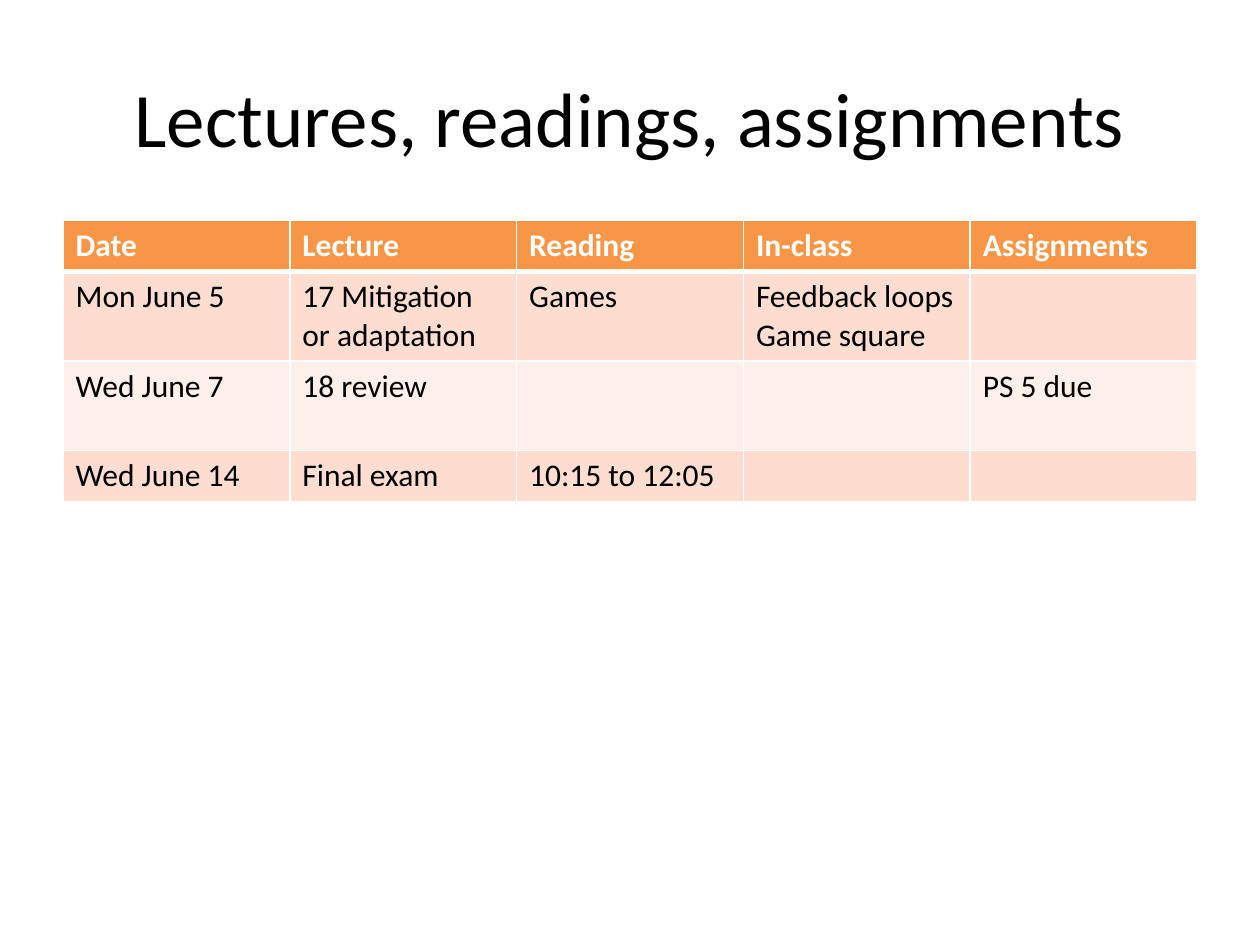
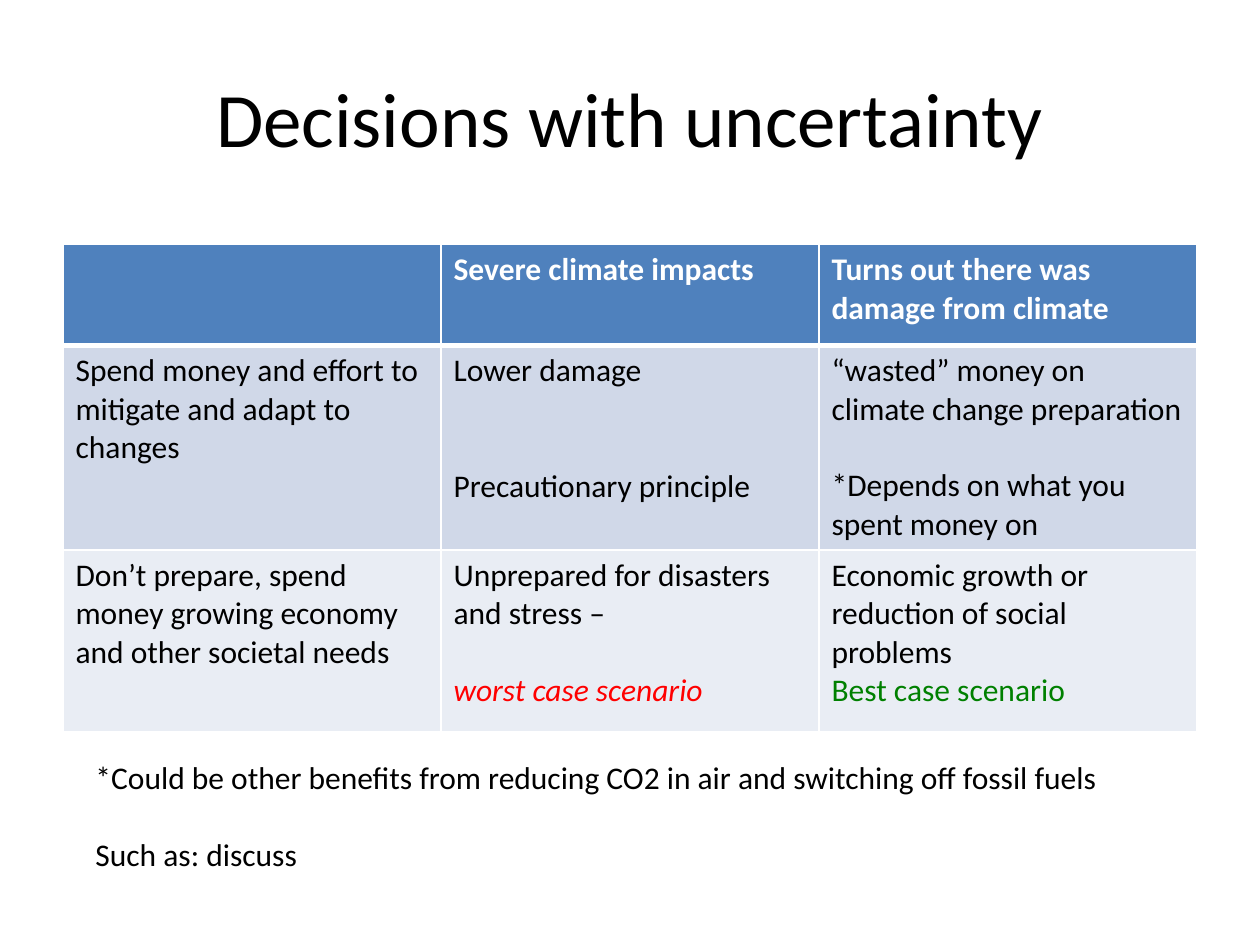
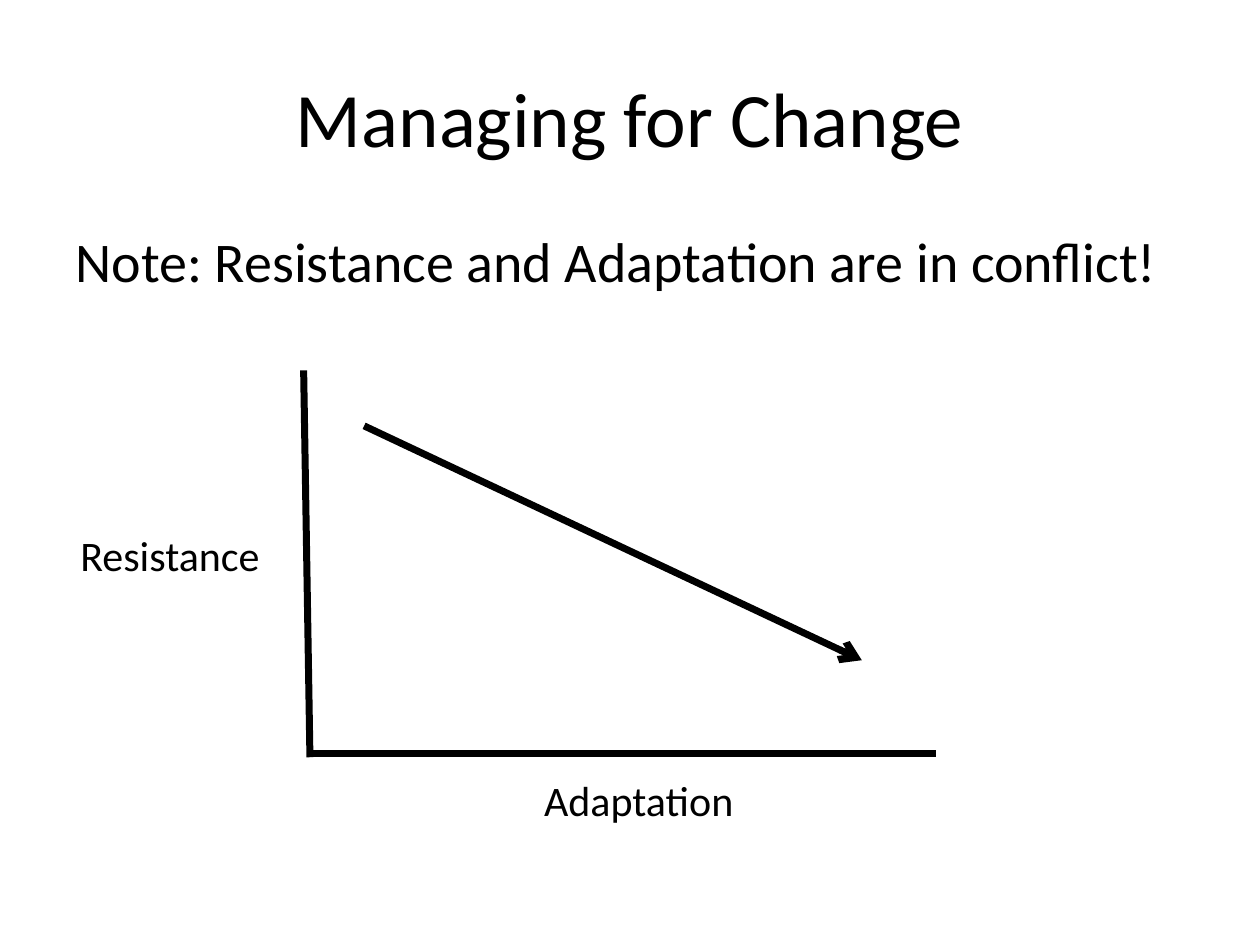
"""Build three slides on lectures, decisions and change."""
from dataclasses import dataclass
from typing import NamedTuple, Union

from lxml.etree import SubElement as Sub
from pptx import Presentation
from pptx.dml.color import RGBColor as Rgb
from pptx.enum.shapes import MSO_CONNECTOR as Link
from pptx.enum.text import MSO_ANCHOR as Anchor, MSO_AUTO_SIZE as Fit, PP_ALIGN as Align
from pptx.oxml.ns import qn
from pptx.util import Inches, Pt


@dataclass(frozen=True)
class Theme:
    font: str = "Calibri"
    ink: str = "000000"
    paper: str = "FFFFFF"
    red: str = "FF0000"
    green: str = "008000"
    title: int = 44
    body: int = 32
    label: int = 24
    text: int = 18
    blank: int = 22
    stroke: int = 4
    rule: int = 1
    bar: int = 3


THEME = Theme()
WIDE, HIGH = Inches(10), Inches(7.5)
COLS, ROWS = 100, 75


class Box(NamedTuple):
    left: float
    top: float
    wide: float
    high: float


class Line(NamedTuple):
    text: str
    ink: str = THEME.ink
    slant: bool = False
    gap: int = 0


class Stroke(NamedTuple):
    start: tuple[float, float]
    end: tuple[float, float]
    arrow: bool = False


class Label(NamedTuple):
    box: Box
    lines: list[Line]
    size: int
    wrap: bool = False


Cell = Union[str, list[Line]]


class Table(NamedTuple):
    top: float
    rows: list[float]
    head: str
    bands: tuple[str, str]
    cells: list[list[Cell]]


TITLE = Box(5, 3, 90, 12.5)
BODY = Box(5, 17.5, 90, 49.5)

PLAN = Table(17.5, [4, 7.1, 7.1, 4], "F79646", ("FCDDCF", "FDEFE9"), [
    ["Date", "Lecture", "Reading", "In-class", "Assignments"],
    ["Mon June 5", "17 Mitigation or adaptation", "Games",
     [Line("Feedback loops"), Line("Game square")], ""],
    ["Wed June 7", "18 review", "", "", "PS 5 due"],
    ["Wed June 14", "Final exam", "10:15 to 12:05", "", ""],
])

CHOICE = Table(19.4, [8, 16.2, 14.4], "4F81BD", ("D0D8E8", "E9EDF4"), [
    ["", "Severe climate impacts", "Turns out there was damage from climate"],
    ["Spend money and effort to mitigate and adapt to changes",
     [Line("Lower damage"), Line("Precautionary principle", gap=2)],
     [Line("“wasted” money on climate change preparation"),
      Line("*Depends on what you spent money on", gap=1)]],
    ["Don’t prepare, spend money growing economy and other societal needs",
     [Line("Unprepared for disasters and stress –"),
      Line("worst case scenario", THEME.red, True, 1)],
     [Line("Economic growth or reduction of social problems"),
      Line("Best case scenario", THEME.green)]],
])

NOTE = Label(Box(6.6, 59.7, 84.7, 10.1), [
    Line("*Could be other benefits from reducing CO2 in air and switching off fossil fuels"),
    Line("Such as: discuss", gap=1),
], THEME.text, True)

AXES = [
    Label(Box(42.2, 61, 17, 5), [Line("Adaptation")], THEME.label),
    Label(Box(5.4, 41.5, 16.3, 5), [Line("Resistance")], THEME.label),
]

TREND = [
    Stroke((24.6, 59.8), (74.3, 59.8)),
    Stroke((24.6, 60.1), (24.1, 29.4)),
    Stroke((28.9, 33.8), (68.4, 52.4), True),
]


def col(num: float) -> int:
    """Turn grid columns into a length."""
    return round(num * WIDE / COLS)


def row(num: float) -> int:
    """Turn grid rows into a length."""
    return round(num * HIGH / ROWS)


def spot(box: Box) -> tuple[int, int, int, int]:
    """Turn a grid box into slide lengths."""
    return col(box.left), row(box.top), col(box.wide), row(box.high)


def write(frame, lines: list[Line], size: int, bold: bool = False) -> None:
    """Fill a text frame with one paragraph a line."""
    for num, line in enumerate(lines):
        para = frame.add_paragraph() if num else frame.paragraphs[0]
        if line.gap:
            para.space_before = Pt(line.gap * THEME.blank)
        run = para.add_run()
        run.text = line.text
        font = run.font
        font.name, font.size = THEME.font, Pt(size)
        font.bold, font.italic = bold, line.slant
        font.color.rgb = Rgb.from_string(line.ink)


def place(shape, box: Box) -> None:
    """Move a placeholder to a grid box."""
    shape.left, shape.top, shape.width, shape.height = spot(box)


def start(deck, kind: int, text: str):
    """Add a slide with a centred title."""
    slide = deck.slides.add_slide(deck.slide_layouts[kind])
    title = slide.shapes.title
    place(title, TITLE)
    frame = title.text_frame
    frame.vertical_anchor = Anchor.MIDDLE
    write(frame, [Line(text)], THEME.title)
    frame.paragraphs[0].alignment = Align.CENTER
    return slide


def edge(cell, tops: int, base: int) -> None:
    """Draw the four borders of a cell."""
    props = cell._tc.get_or_add_tcPr()
    sides = {"L": THEME.rule, "R": THEME.rule, "T": tops, "B": base}
    for num, (side, size) in enumerate(sides.items()):
        line = Sub(props, qn(f"a:ln{side}"), w=str(Pt(size)))
        Sub(Sub(line, qn("a:solidFill")), qn("a:srgbClr"), val=THEME.paper)
        props.insert(num, line)


def grid(slide, data: Table) -> None:
    """Add a table with a heading row and banded rows."""
    wide = len(data.cells[0])
    box = Box(TITLE.left, data.top, TITLE.wide, sum(data.rows))
    table = slide.shapes.add_table(len(data.rows), wide, *spot(box)).table
    for item in table.columns:
        item.width = col(TITLE.wide / wide)
    for pos, (high, cells) in enumerate(zip(data.rows, data.cells)):
        table.rows[pos].height = row(high)
        head = pos == 0
        fill = data.head if head else data.bands[(pos - 1) % 2]
        for num, text in enumerate(cells):
            cell = table.cell(pos, num)
            cell.fill.solid()
            cell.fill.fore_color.rgb = Rgb.from_string(fill)
            edge(cell, THEME.bar if pos == 1 else THEME.rule,
                 THEME.bar if head else THEME.rule)
            if isinstance(text, str):
                ink = THEME.paper if head else THEME.ink
                text = [Line(text, ink)] if text else []
            write(cell.text_frame, text, THEME.text, head)


def tag(slide, data: Label) -> None:
    """Add a text box that fits its text."""
    frame = slide.shapes.add_textbox(*spot(data.box)).text_frame
    frame.word_wrap = data.wrap
    frame.auto_size = Fit.SHAPE_TO_FIT_TEXT
    write(frame, data.lines, data.size)


def draw(slide, data: Stroke) -> None:
    """Add a straight line, with an arrowhead if asked."""
    (left, top), (right, base) = data.start, data.end
    line = slide.shapes.add_connector(
        Link.STRAIGHT, col(left), row(top), col(right), row(base))
    line.line.width = Pt(THEME.stroke)
    line.line.color.rgb = Rgb.from_string(THEME.ink)
    props = line._element.spPr
    if data.arrow:
        Sub(props.find(qn("a:ln")), qn("a:tailEnd"), type="arrow")
    Sub(props, qn("a:effectLst"))


def state(slide, text: str) -> None:
    """Fill the body with one plain line."""
    body = slide.placeholders[1]
    place(body, BODY)
    write(body.text_frame, [Line(text)], THEME.body)
    props = body.text_frame.paragraphs[0]._p.get_or_add_pPr()
    props.set("marL", "0")
    props.set("indent", "0")
    Sub(props, qn("a:buNone"))


def main() -> None:
    """Build and save the deck."""
    deck = Presentation()
    deck.slide_width, deck.slide_height = WIDE, HIGH

    grid(start(deck, 5, "Lectures, readings, assignments"), PLAN)

    slide = start(deck, 5, "Decisions with uncertainty")
    grid(slide, CHOICE)
    tag(slide, NOTE)

    slide = start(deck, 1, "Managing for Change")
    state(slide, "Note: Resistance and Adaptation are in conflict!")
    for label in AXES:
        tag(slide, label)
    for stroke in TREND:
        draw(slide, stroke)

    deck.save("out.pptx")


if __name__ == "__main__":
    main()
